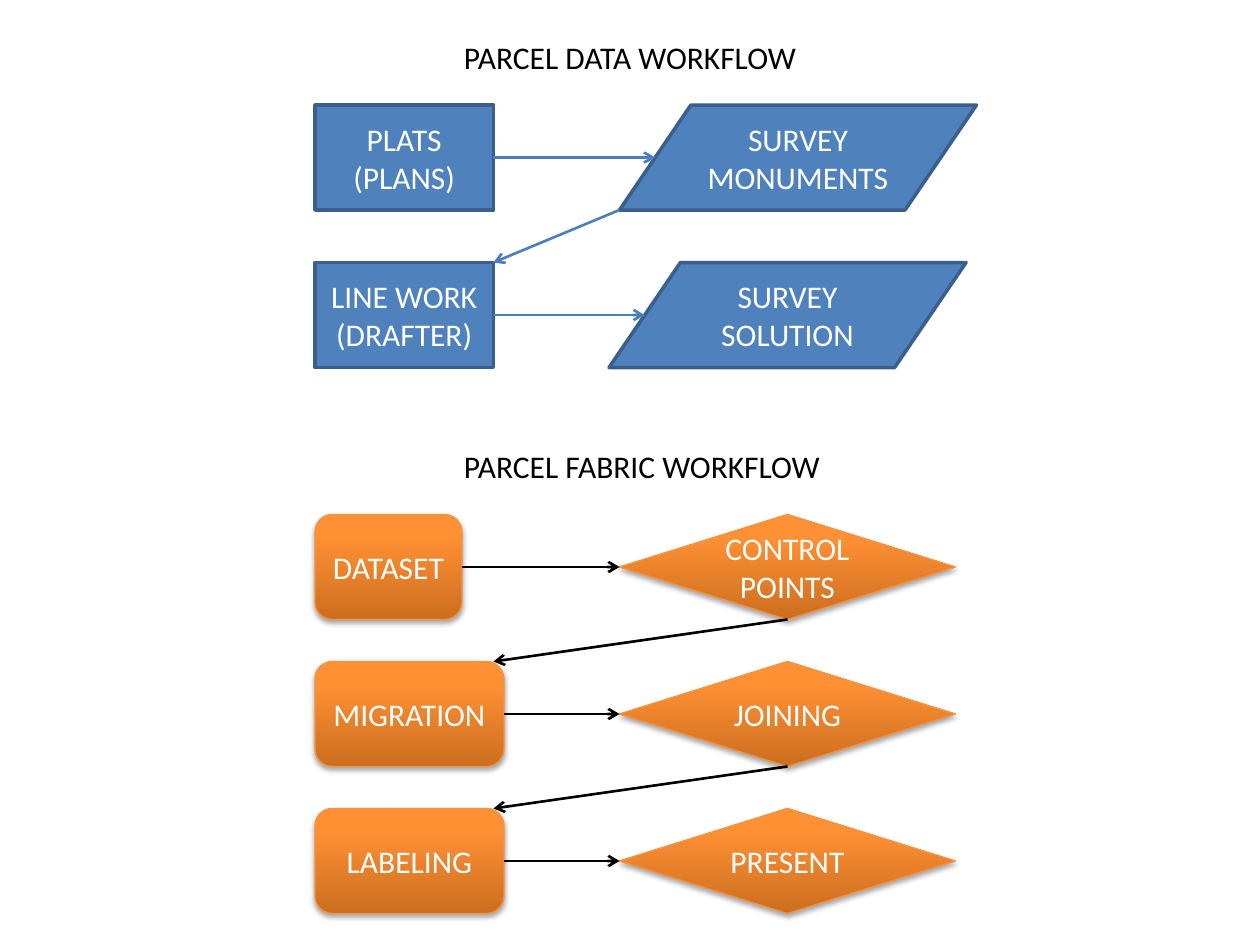
from lxml.etree import SubElement
from pptx import Presentation
from pptx.dml.color import RGBColor
from pptx.enum.shapes import MSO_CONNECTOR, MSO_SHAPE as Shape
from pptx.enum.text import MSO_ANCHOR, PP_ALIGN
from pptx.oxml import parse_xml
from pptx.oxml.ns import nsdecls, qn
from pptx.util import Inches, Pt

BLACK = RGBColor(0x00, 0x00, 0x00)
WHITE = RGBColor(0xFF, 0xFF, 0xFF)
BLUE = RGBColor(0x4F, 0x81, 0xBD)
BLUE_EDGE = RGBColor(0x3A, 0x5F, 0x8C)
BLUE_ARROW = RGBColor(0x4B, 0x7E, 0xBC)
ORANGE_EDGE = RGBColor(0xF6, 0x92, 0x40)
ORANGE_STOPS = [(0, RGBColor(0xCC, 0x6E, 0x20)), (80, RGBColor(0xFF, 0x90, 0x34)),
                (100, RGBColor(0xFF, 0x91, 0x36))]

# Grid of 120 columns by 90 rows
prs = Presentation()
prs.slide_width, prs.slide_height = Inches(10), Inches(7.5)
U = prs.slide_width / 120
LEFT, RIGHT, HEIGHT = 30, 59, 10
DIAGONAL_END = 47
s = prs.slides.add_slide(prs.slide_layouts[5])


def add_step(kind, x, y, w, text, orange=False):
    sp = s.shapes.add_shape(kind, *(int(v * U) for v in (x, y, w, HEIGHT)))
    if orange:
        stops = "".join(f'<a:gs pos="{pos * 1000}"><a:srgbClr val="{color}"/></a:gs>'
                        for pos, color in ORANGE_STOPS)
        sp._element.spPr.append(parse_xml(
            f'<a:gradFill {nsdecls("a")} rotWithShape="1"><a:gsLst>{stops}</a:gsLst>'
            '<a:lin ang="16200000" scaled="0"/></a:gradFill>'))
    else:
        sp.fill.solid()
        sp.fill.fore_color.rgb = BLUE
    sp.line.color.rgb = ORANGE_EDGE if orange else BLUE_EDGE
    sp.line.width = Pt(0.75 if orange else 2)
    sp.shadow.inherit = False
    if orange:
        effects = sp._element.spPr.find(qn("a:effectLst"))
        effects.append(parse_xml(
            f'<a:outerShdw {nsdecls("a")} blurRad="{Pt(3.1)}" dist="{Pt(1.8)}" '
            'dir="5400000" rotWithShape="0"><a:srgbClr val="000000">'
            '<a:alpha val="35000"/></a:srgbClr></a:outerShdw>'))
    tf = sp.text_frame
    tf.text = text
    tf.vertical_anchor = MSO_ANCHOR.MIDDLE
    for p in tf.paragraphs:
        p.alignment = PP_ALIGN.CENTER
        for name, value in {"name": "Calibri", "size": Pt(18)}.items():
            setattr(p.font, name, value)
        p.font.color.rgb = WHITE
    return sp


def add_arrow(start, end, color, begin=None, finish=None):
    """Draw an arrow in grid units; begin and finish are (shape, side) joints."""
    cx = s.shapes.add_connector(MSO_CONNECTOR.STRAIGHT,
                                *(int(v * U) for v in (*start, *end)))
    if begin:
        cx.begin_connect(*begin)
    if finish:
        cx.end_connect(*finish)
    cx.line.color.rgb = color
    cx.line.width = Pt(1.5)
    SubElement(cx.line._get_or_add_ln(), qn("a:tailEnd"), type="arrow")
    SubElement(cx._element.spPr, qn("a:effectLst"))


# Headings
title = s.shapes.title
fabric = s.shapes.add_textbox(int(43 * U), int(42 * U), Inches(3.05), Inches(0.4))
title.left, title.top, title.width, title.height = (
    int(v * U) for v in (6, 3, 108, 4.9))
title.text_frame.vertical_anchor = MSO_ANCHOR.MIDDLE
fabric.text_frame.word_wrap = False
for sp, text, align in [(title, "PARCEL DATA WORKFLOW", PP_ALIGN.CENTER),
                        (fabric, "PARCEL FABRIC WORKFLOW", PP_ALIGN.LEFT)]:
    sp.text_frame.text = text
    p = sp.text_frame.paragraphs[0]
    p.alignment = align
    for name, value in {"name": "Calibri", "size": Pt(18)}.items():
        setattr(p.font, name, value)
    p.font.color.rgb = BLACK

# Parcel data: rectangles lead to parallelograms
data_rows = [("PLATS\n(PLANS)", "SURVEY MONUMENTS", RIGHT),
             ("LINE WORK\n(DRAFTER)", "SURVEY SOLUTION", RIGHT - 1)]
for i, (source, result, x) in enumerate(data_rows):
    y, w = 10 + 15 * i, 34
    box = add_step(Shape.FLOWCHART_PROCESS, LEFT, y, 17, source)
    add_step(Shape.FLOWCHART_DATA, x, y, w, result)
    middle = y + HEIGHT / 2
    add_arrow((DIAGONAL_END, middle), (x + w / 10, middle), BLUE_ARROW, (box, 3))
    if i + 1 < len(data_rows):
        add_arrow((x, y + HEIGHT), (DIAGONAL_END, y + 15), BLUE_ARROW)

# Parcel fabric: rounded boxes lead to diamonds
fabric_rows = [("DATASET", 14, "CONTROL POINTS"), ("MIGRATION", 18, "JOINING"),
               ("LABELING", 18, "PRESENT")]
for i, (source, w, result) in enumerate(fabric_rows):
    y = 49 + 14 * i
    box = add_step(Shape.FLOWCHART_ALTERNATE_PROCESS, LEFT, y, w, source, orange=True)
    diamond = add_step(Shape.FLOWCHART_DECISION, RIGHT, y, 32, result, orange=True)
    middle = y + HEIGHT / 2
    add_arrow((LEFT + w, middle), (RIGHT, middle), BLACK, (box, 3), (diamond, 1))
    if i + 1 < len(fabric_rows):
        add_arrow((RIGHT + 16, y + HEIGHT), (DIAGONAL_END, y + 14), BLACK, (diamond, 2))

prs.save("out.pptx")
